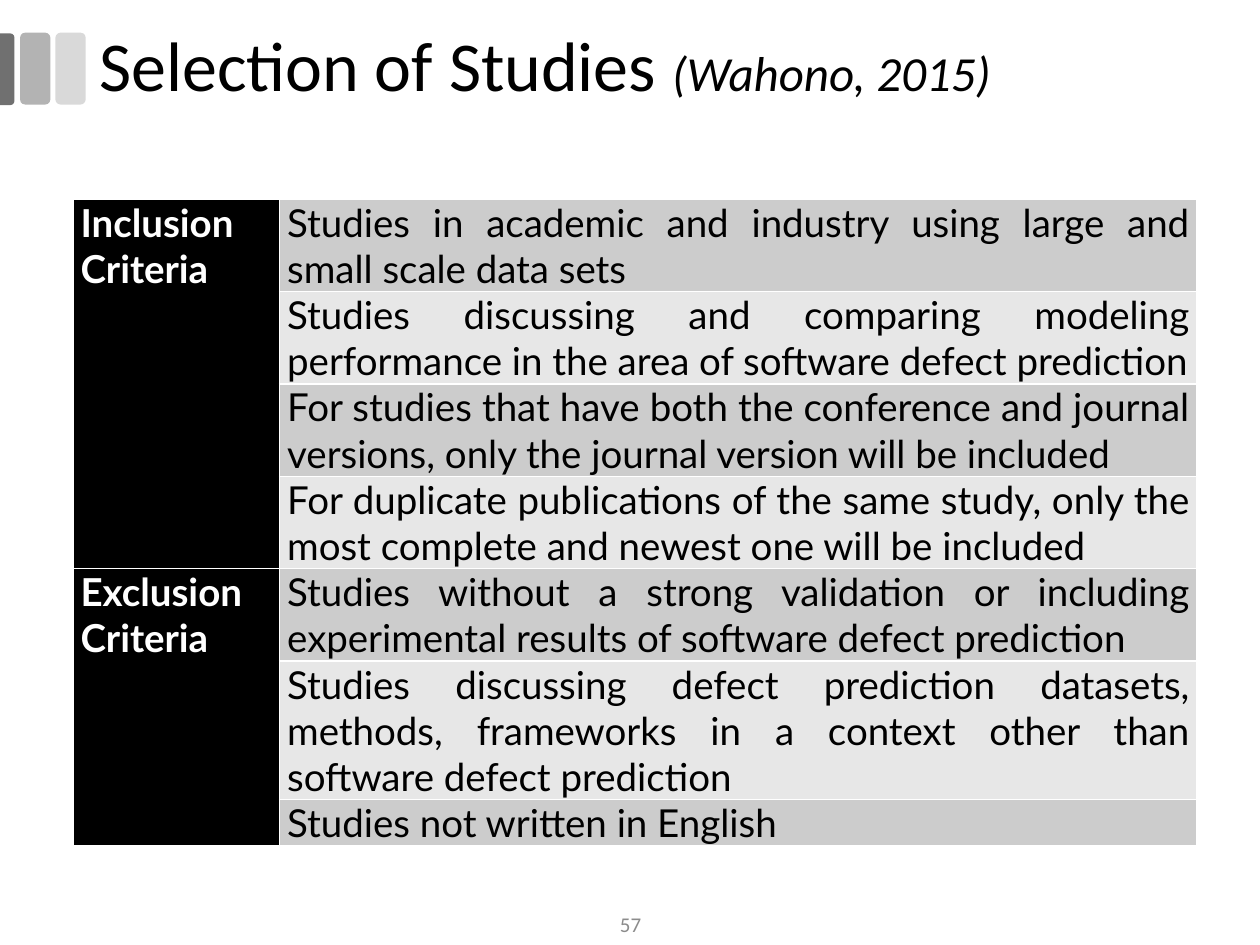
from lxml.etree import SubElement
from pptx import Presentation
from pptx.dml.color import RGBColor
from pptx.enum.shapes import MSO_SHAPE as Shape
from pptx.enum.text import MSO_ANCHOR as Anchor, PP_ALIGN as Align
from pptx.oxml.ns import qn
from pptx.util import Inches, Pt

COLORS = {
    "black": "000000", "white": "FFFFFF", "number": "8C8C8C",
    "band_dark": "CCCCCC", "band_light": "E7E7E7",
    "bar_light": "D9D9D9", "bar_mid": "B3B3B3", "bar_dark": "707070",
}
CRITERIA = {
    "Inclusion Criteria": [
        "Studies in academic and industry using large and small scale data sets",
        "Studies discussing and comparing modeling performance in the area of "
        "software defect prediction",
        "For studies that have both the conference and journal versions, only "
        "the journal version will be included",
        "For duplicate publications of the same study, only the most complete "
        "and newest one will be included",
    ],
    "Exclusion Criteria": [
        "Studies without a strong validation or including experimental results "
        "of software defect prediction",
        "Studies discussing defect prediction datasets, methods, frameworks in "
        "a context other than software defect prediction",
        "Studies not written in English",
    ],
}
LINES_PER_ROW = [2, 2, 2, 2, 2, 3, 1]
TABLE_HEIGHT = 5.13
COLUMN_WIDTHS = [1.64, 7.28]


def rgb(name):
    return RGBColor.from_string(COLORS[name])


def style_font(font, name, size, color, bold=False, italic=False):
    font.name, font.size = name, Pt(size)
    font.bold, font.italic = bold, italic
    font.color.rgb = rgb(color)


def add_bar(page, preset, left, top, width, height, color):
    bar = page.shapes.add_shape(
        preset, Inches(left), Inches(top), Inches(width), Inches(height))
    bar.shadow.inherit = False
    bar.fill.solid()
    bar.fill.fore_color.rgb = rgb(color)
    bar.line.fill.background()
    return bar


def add_bars(page):
    add_bar(page, Shape.ROUNDED_RECTANGLE, 0.44, 0.26, 0.24, 0.57, "bar_light")
    add_bar(page, Shape.ROUNDED_RECTANGLE, 0.16, 0.26, 0.24, 0.57, "bar_mid")
    edge = add_bar(page, Shape.ROUND_2_SAME_RECTANGLE,
                   -0.23, 0.49, 0.57, 0.12, "bar_dark")
    edge.rotation = 90
    edge.adjustments[0] = 0.29


def add_text(page, left, top, width, height, spans, color, align=Align.LEFT):
    """Add one paragraph made of (text, size, italic) spans."""
    box = page.shapes.add_textbox(
        Inches(left), Inches(top), Inches(width), Inches(height))
    frame = box.text_frame
    frame.word_wrap = True
    frame.vertical_anchor = Anchor.MIDDLE
    para = frame.paragraphs[0]
    para.alignment = align
    for text, size, italic in spans:
        span = para.add_run()
        span.text = text
        style_font(span.font, "Calibri", size, color, italic=italic)
    return para


def set_borders(cell, color):
    properties = cell._tc.get_or_add_tcPr()
    for side in ("lnL", "lnR", "lnT", "lnB"):
        line = SubElement(properties, qn(f"a:{side}"), w=str(Pt(1)))
        fill = SubElement(line, qn("a:solidFill"))
        SubElement(fill, qn("a:srgbClr"), val=COLORS[color])


def style_cell(cell, fill, color, bold=False):
    set_borders(cell, "white")
    cell.fill.solid()
    cell.fill.fore_color.rgb = rgb(fill)
    cell.margin_left = cell.margin_right = Inches(0.06)
    cell.margin_top = cell.margin_bottom = 0
    para = cell.text_frame.paragraphs[0]
    para.alignment = Align.JUSTIFY
    style_font(para.font, "Lato", 22, color, bold)
    for span in para.runs:
        style_font(span.font, "Lato", 22, color, bold)


def add_criteria_table(page):
    table = page.shapes.add_table(
        len(LINES_PER_ROW), 2, Inches(0.58), Inches(1.58),
        Inches(sum(COLUMN_WIDTHS)), Inches(TABLE_HEIGHT)).table
    for column, width in zip(table.columns, COLUMN_WIDTHS):
        column.width = Inches(width)
    line_height = TABLE_HEIGHT / sum(LINES_PER_ROW)
    for row, lines in zip(table.rows, LINES_PER_ROW):
        row.height = Inches(lines * line_height)

    first = 0
    for heading, studies in CRITERIA.items():
        last = first + len(studies) - 1
        table.cell(first, 0).merge(table.cell(last, 0))
        table.cell(first, 0).text = heading
        for index, study in enumerate(studies, first):
            style_cell(table.cell(index, 0), "black", "white", bold=True)
            cell = table.cell(index, 1)
            cell.text = study
            style_cell(cell, "band_light" if index % 2 else "band_dark", "black")
        first = last + 1


def main():
    deck = Presentation()
    deck.slide_width, deck.slide_height = Inches(10), Inches(7.5)
    page = deck.slides.add_slide(deck.slide_layouts[6])
    add_bars(page)
    add_criteria_table(page)
    title = add_text(page, 0.69, 0.17, 9.3, 0.75,
                     [("Selection of Studies ", 40, False),
                      ("(Wahono, 2015)", 28, True)], "black")
    title.line_spacing = 0.9
    add_text(page, 3.88, 7.17, 2.25, 0.33, [("57", 12, False)],
             "number", Align.CENTER)
    deck.save("out.pptx")


if __name__ == "__main__":
    main()
